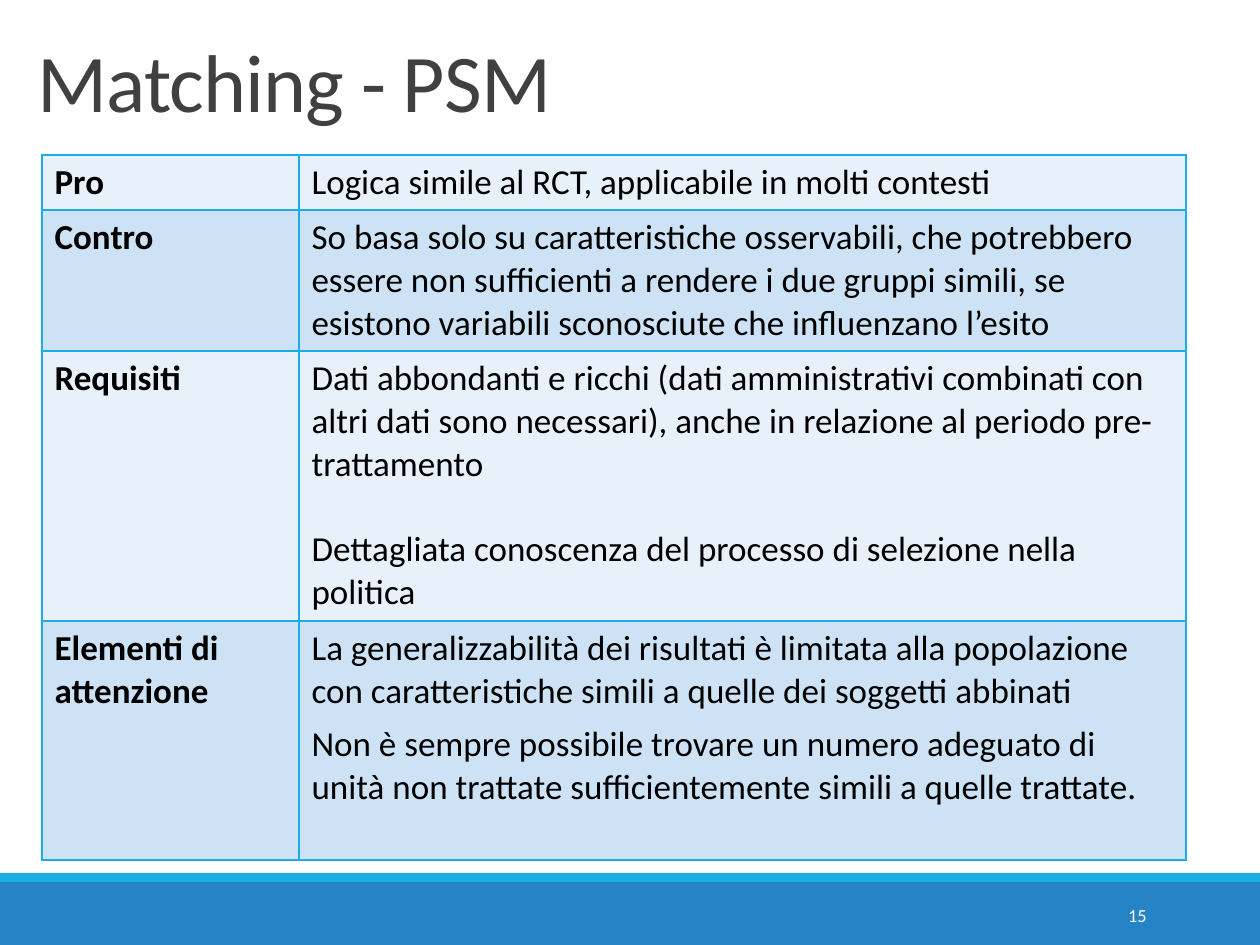
from lxml import etree
from pptx import Presentation
from pptx.dml.color import RGBColor
from pptx.enum.shapes import MSO_SHAPE
from pptx.enum.text import MSO_ANCHOR, MSO_AUTO_SIZE, PP_ALIGN
from pptx.oxml.ns import qn
from pptx.util import Pt

RECT = MSO_SHAPE.RECTANGLE
MIDDLE, BOTTOM = MSO_ANCHOR.MIDDLE, MSO_ANCHOR.BOTTOM
LEFT, RIGHT = PP_ALIGN.LEFT, PP_ALIGN.RIGHT
NO_AUTOFIT = MSO_AUTO_SIZE.NONE

FONT = "Calibri"
BLUE = RGBColor(0x26, 0x83, 0xC6)
CYAN = RGBColor(0x1C, 0xAD, 0xE4)
GREY = RGBColor(0x40, 0x40, 0x40)
BLACK = RGBColor(0, 0, 0)
WHITE = RGBColor(0xFF, 0xFF, 0xFF)
BANDS = [RGBColor(0xE8, 0xF1, 0xFA), RGBColor(0xCD, 0xE3, 0xF5)]

COL_WIDTHS = [257, 887]
# Row height, label, paragraphs, space before and after each paragraph (points)
ROWS = [
    (55, "Pro", ["Logica simile al RCT, applicabile in molti contesti"], 0, 0),
    (141, "Contro", [
        "So basa solo su caratteristiche osservabili, che potrebbero essere "
        "non sufficienti a rendere i due gruppi simili, se esistono variabili "
        "sconosciute che influenzano l’esito"], 0, 0),
    (270, "Requisiti", [
        "Dati abbondanti e ricchi (dati amministrativi combinati con altri dati "
        "sono necessari), anche in relazione al periodo pre-trattamento",
        "Dettagliata conoscenza del processo di selezione nella politica"], 24, 0),
    (239, "Elementi di attenzione", [
        "La generalizzabilità dei risultati è limitata alla popolazione con "
        "caratteristiche simili a quelle dei soggetti abbinati",
        "Non è sempre possibile trovare un numero adeguato di unità non trattate "
        "sufficientemente simili a quelle trattate."], 0, 6),
]


def px(n):
    """Turn px, 126 to the inch, into EMU."""
    return round(n * 914400 / 126)


def format_runs(p, size, color, bold=False):
    for r in p.runs:
        r.font.name = FONT
        r.font.size = Pt(size)
        r.font.bold = bold
        r.font.color.rgb = color


def add_bar(slide, top, height, color):
    sp = slide.shapes.add_shape(RECT, 0, px(top), px(1260), px(height))
    sp.shadow.inherit = False
    sp.fill.solid()
    sp.fill.fore_color.rgb = color
    sp.line.fill.background()


def set_title(slide, text):
    sp = slide.shapes.title
    sp.left, sp.top, sp.width, sp.height = px(25), px(36), px(1211), px(100)
    tf = sp.text_frame
    tf.text = text
    tf.auto_size = NO_AUTOFIT
    tf.vertical_anchor = BOTTOM
    p = tf.paragraphs[0]
    p.alignment = LEFT
    p.line_spacing = 0.85
    format_runs(p, 46.8, GREY)
    p.runs[0].font._element.set("spc", "-50")


def add_page_number(slide, text):
    sp = slide.shapes.add_textbox(px(1023), px(890), px(136), px(50))
    tf = sp.text_frame
    tf.word_wrap = True
    tf.vertical_anchor = MIDDLE
    tf.text = text
    p = tf.paragraphs[0]
    p.alignment = RIGHT
    format_runs(p, 10.5, WHITE)


def set_borders(cell):
    tc_pr = cell._tc.get_or_add_tcPr()
    for i, side in enumerate(("lnL", "lnR", "lnT", "lnB")):
        ln = etree.Element(qn(f"a:{side}"), w=str(Pt(1)))
        fill = etree.SubElement(ln, qn("a:solidFill"))
        etree.SubElement(fill, qn("a:srgbClr"), val=str(CYAN))
        tc_pr.insert(i, ln)


def fill_cell(cell, paragraphs, band, bold=False, before=0, after=0):
    cell.fill.solid()
    cell.fill.fore_color.rgb = band
    set_borders(cell)
    tf = cell.text_frame
    tf.text = "\n".join(paragraphs)
    for i, p in enumerate(tf.paragraphs):
        p.space_before = Pt(before if i else 0)
        p.space_after = Pt(after)
        format_runs(p, 20, BLACK, bold)


def add_summary_table(slide):
    heights = [row[0] for row in ROWS]
    table = slide.shapes.add_table(
        len(ROWS), len(COL_WIDTHS), px(42), px(155),
        px(sum(COL_WIDTHS)), px(sum(heights))).table
    table.first_row = False
    table.horz_banding = False
    for col, width in zip(table.columns, COL_WIDTHS):
        col.width = px(width)
    for i, (height, label, paragraphs, before, after) in enumerate(ROWS):
        table.rows[i].height = px(height)
        band = BANDS[i % 2]
        fill_cell(table.cell(i, 0), [label], band, bold=True)
        fill_cell(table.cell(i, 1), paragraphs, band, before=before, after=after)


def main():
    prs = Presentation()
    prs.slide_width, prs.slide_height = px(1260), px(945)
    slide = prs.slides.add_slide(prs.slide_layouts[5])
    add_bar(slide, 882, 63, BLUE)
    add_bar(slide, 873, 9, CYAN)
    add_page_number(slide, "15")
    set_title(slide, "Matching - PSM")
    add_summary_table(slide)
    prs.save("out.pptx")


if __name__ == "__main__":
    main()
